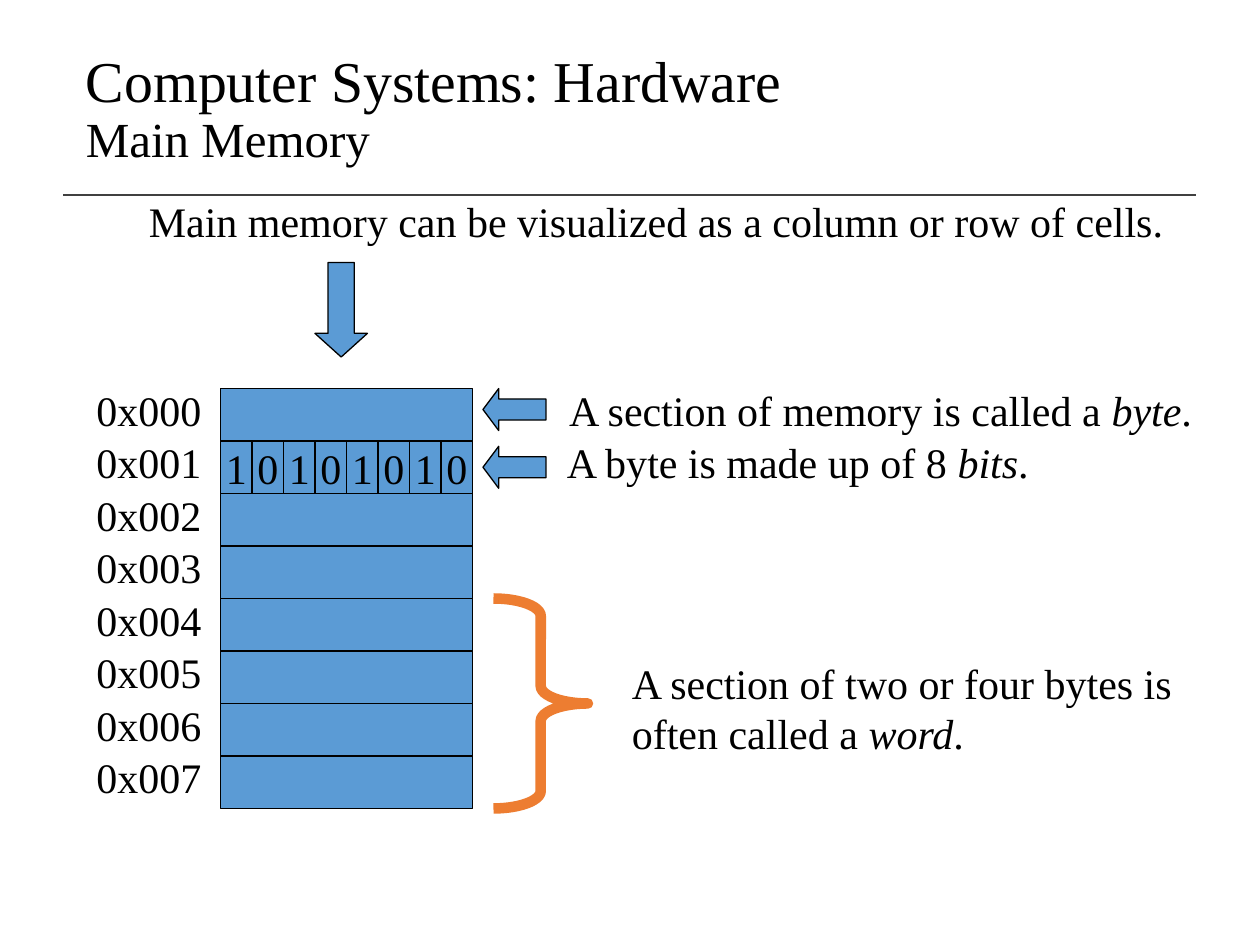
import dataclasses

import pptx
import pptx.dml.color
import pptx.enum.shapes
import pptx.enum.text
import pptx.oxml
import pptx.oxml.ns
import pptx.util

Pt = pptx.util.Pt
SHAPE = pptx.enum.shapes.MSO_SHAPE
ALIGN = pptx.enum.text.PP_ALIGN
ANCHOR = pptx.enum.text.MSO_ANCHOR
FIT = pptx.enum.text.MSO_AUTO_SIZE


@dataclasses.dataclass(frozen=True)
class Theme:
    font: str = "Times New Roman"
    ink: str = "000000"
    cell: str = "5B9BD5"
    brace: str = "ED7D31"
    rule: str = "404040"
    title: float = 33
    subtitle: float = 28
    body: float = 24
    outline: float = 0.75
    brace_width: float = 6


THEME = Theme()


def color(code):
    return pptx.dml.color.RGBColor.from_string(code)


def set_all(target, values):
    for name, value in values.items():
        setattr(target, name, value)


def add_span(para, text, size=THEME.body, italic=False):
    span = para.add_run()
    span.text = text
    set_all(span.font, {"name": THEME.font, "size": Pt(size), "italic": italic})
    span.font.color.rgb = color(THEME.ink)


def add_text(page, area, parts, wrap=False):
    """Write parts left to right; every second part is italic."""
    box = page.shapes.add_textbox(*map(Pt, area))
    set_all(box.text_frame, {"word_wrap": wrap, "auto_size": FIT.SHAPE_TO_FIT_TEXT})
    para = box.text_frame.paragraphs[0]
    for index, text in enumerate(parts):
        add_span(para, text, italic=index % 2 == 1)


def add_figure(page, kind, area, adjustments=(), fill=THEME.cell,
               line=THEME.ink, width=THEME.outline):
    figure = page.shapes.add_shape(kind, *map(Pt, area))
    figure.shadow.inherit = False
    for index, value in enumerate(adjustments):
        figure.adjustments[index] = value
    if fill:
        figure.fill.solid()
        figure.fill.fore_color.rgb = color(fill)
    else:
        figure.fill.background()
    figure.line.color.rgb = color(line)
    figure.line.width = Pt(width)
    return figure


def add_header(page, left, top, width, height):
    # Two-line title
    box = page.shapes.add_textbox(*map(Pt, (left, top, width, height)))
    set_all(box.text_frame, {"word_wrap": True, "vertical_anchor": ANCHOR.MIDDLE})
    para = box.text_frame.paragraphs[0]
    para.line_spacing = 0.9
    add_span(para, "Computer Systems: Hardware", THEME.title)
    para.add_line_break()
    add_span(para, "Main Memory", THEME.subtitle)

    # Rule below the title
    rule_y = top + height + 9.5
    rule = page.shapes.add_connector(
        pptx.enum.shapes.MSO_CONNECTOR.STRAIGHT,
        *map(Pt, (left - 6, rule_y, left + 641.3, rule_y)))
    rule.line.color.rgb = color(THEME.rule)
    rule.line.width = Pt(1)
    rule._element.spPr.append(pptx.oxml.parse_xml(
        f'<a:effectLst {pptx.oxml.ns.nsdecls("a")}/>'))


def add_intro(page, left, top, width, height):
    add_text(page, (left, top, width, 36),
             ["Main memory can be visualized as a column or row of cells."])
    add_figure(page, SHAPE.DOWN_ARROW, (left + 102, top + 42, 30, height - 42),
               (0.5, 0.45))


def add_memory(page, left, top, width, height, count=8, bits="10101010", bit_row=1):
    row_height = height / count
    # Addresses and byte cells
    for row in range(count):
        y = top + row * row_height
        add_text(page, (left - 78, y - 6, 75, 36), [f"0x{row:03}"])
        add_figure(page, SHAPE.RECTANGLE, (left, y, width, row_height))

    # One byte split into bits
    bit_width = width / len(bits)
    for column, bit in enumerate(bits):
        cell = add_figure(page, SHAPE.RECTANGLE,
                          (left + column * bit_width, top + bit_row * row_height,
                           bit_width, row_height))
        set_all(cell.text_frame, {"word_wrap": False, "vertical_anchor": ANCHOR.MIDDLE})
        para = cell.text_frame.paragraphs[0]
        para.alignment = ALIGN.CENTER
        add_span(para, bit)


def add_arrow_note(page, left, top, width, height, text_left, text_top, parts):
    add_figure(page, SHAPE.LEFT_ARROW, (left, top, 36, 24), (0.5, 0.375))
    add_text(page, (text_left, text_top, width, height), parts)


def add_word_note(page, left, top, width, height):
    add_figure(page, SHAPE.RIGHT_BRACE, (left, top, 54, height), (0.185, 0.5),
               fill=None, line=THEME.brace, width=THEME.brace_width)
    add_text(page, (left + 72, top + 30, width - 72, 64.8),
             ["A section of two or four bytes is often called a ", "word", "."],
             wrap=True)


def main():
    deck = pptx.Presentation()
    set_all(deck, {"slide_width": Pt(720), "slide_height": Pt(540)})
    page = deck.slides.add_slide(deck.slide_layouts[6])

    add_header(page, 42, 24, 678, 78)
    add_intro(page, 78, 108, 594.7, 96)
    add_memory(page, 126, 222, 144, 240)
    add_arrow_note(page, 276, 222, 371.5, 36, 318.2, 216,
                   ["A section of memory is called a ", "byte", "."])
    add_arrow_note(page, 276, 255, 280, 36, 316.8, 246,
                   ["A byte is made up of 8 ", "bits", "."])
    add_word_note(page, 282, 342, 415.5, 120)

    deck.save("out.pptx")


if __name__ == "__main__":
    main()
